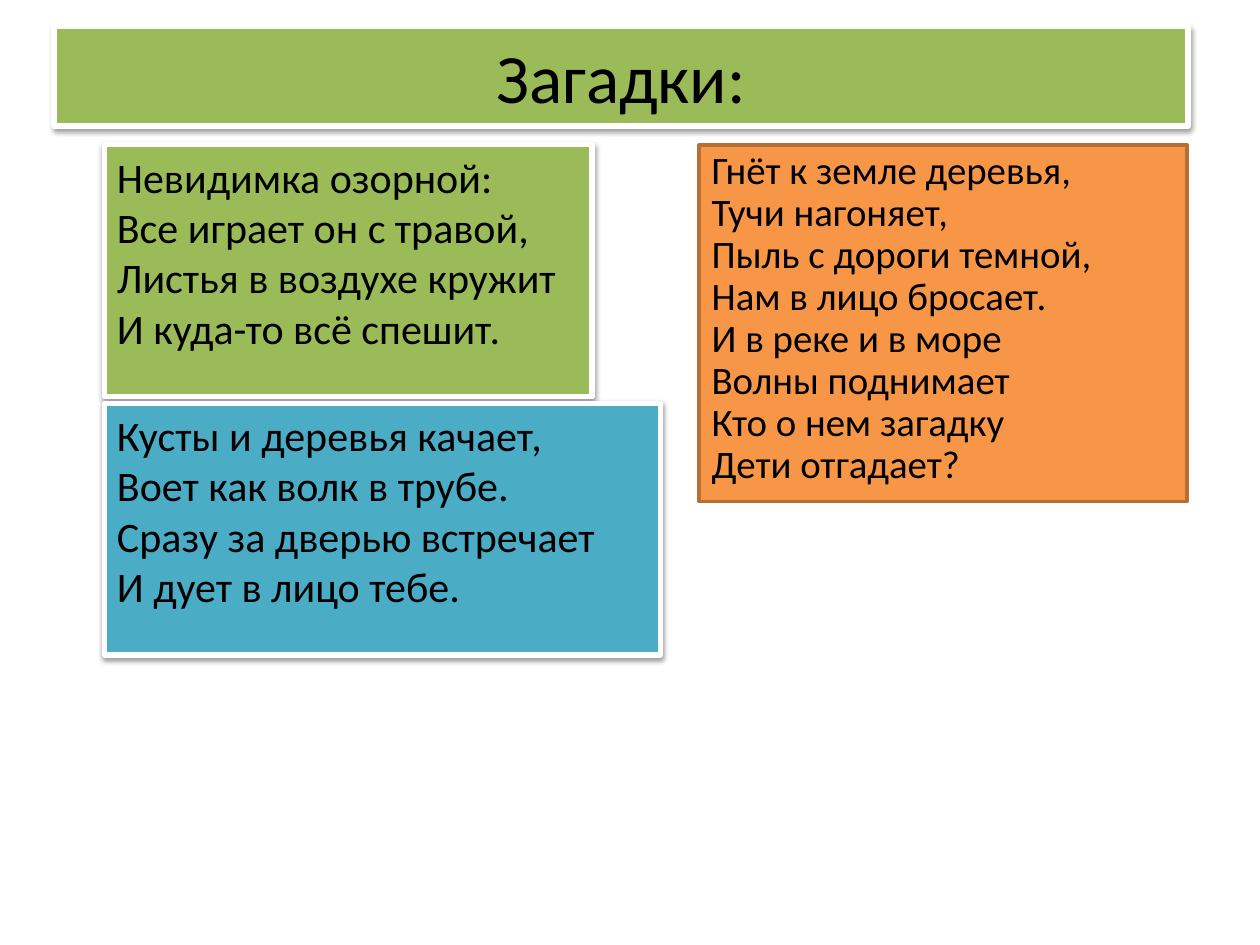
from dataclasses import dataclass

import pptx
import pptx.dml.color
import pptx.enum.shapes
import pptx.enum.text
import pptx.oxml
import pptx.oxml.ns
import pptx.util


@dataclass(frozen=True)
class Theme:
    font: str = "Calibri"
    text: str = "000000"
    green: str = "9BBB59"
    orange: str = "F79646"
    brown: str = "B76F34"
    blue: str = "4BACC6"
    white: str = "FFFFFF"
    title_size: float = 39.6
    verse_size: float = 24
    small_verse_size: float = 22.2


THEME = Theme()
WIDTH, HEIGHT = 10, 7.5
VERSE_INDENT = 0.38


def color(value):
    return pptx.dml.color.RGBColor.from_string(value)


def write_text(frame, text, *, size, align="LEFT", anchor="TOP", indent=0, spacing=None):
    """Fill a text frame with one paragraph per line of text."""
    frame.word_wrap = True
    frame.vertical_anchor = getattr(pptx.enum.text.MSO_ANCHOR, anchor)
    for index, line in enumerate(text.splitlines()):
        paragraph = frame.add_paragraph() if index else frame.paragraphs[0]
        paragraph.alignment = getattr(pptx.enum.text.PP_ALIGN, align)
        if spacing:
            paragraph.line_spacing = spacing
        if indent:
            properties = paragraph._p.get_or_add_pPr()
            properties.set("marL", str(pptx.util.Inches(indent)))
            properties.set("indent", str(-pptx.util.Inches(indent)))
        run = paragraph.add_run()
        run.text = line
        run.font.name = THEME.font
        run.font.size = pptx.util.Pt(size)
        run.font.color.rgb = color(THEME.text)


class RiddleSlide:
    def __init__(self, presentation, theme):
        self.presentation = presentation
        self.theme = theme
        self.slide = presentation.slides.add_slide(presentation.slide_layouts[6])

    def box(self, left, top, width, height, fill, line, line_width):
        """Add a rectangle placed by shares of the slide's size."""
        across, down = self.presentation.slide_width, self.presentation.slide_height
        shape = self.slide.shapes.add_shape(
            pptx.enum.shapes.MSO_SHAPE.RECTANGLE,
            round(left * across), round(top * down),
            round(width * across), round(height * down))
        shape.shadow.inherit = False
        shape.fill.solid()
        shape.fill.fore_color.rgb = color(fill)
        shape.line.color.rgb = color(line)
        shape.line.width = pptx.util.Pt(line_width)
        return shape

    def raised_box(self, *place, fill):
        """Add a white-edged rectangle with a soft shadow below it."""
        shape = self.box(*place, fill, self.theme.white, 3)
        effects = shape._element.spPr.find(pptx.oxml.ns.qn("a:effectLst"))
        effects.append(pptx.oxml.parse_xml(
            f'<a:outerShdw {pptx.oxml.ns.nsdecls("a")} blurRad="{pptx.util.Pt(3.1)}" '
            f'dist="{pptx.util.Pt(1.6)}" dir="5400000" rotWithShape="0">'
            '<a:srgbClr val="000000"><a:alpha val="38000"/></a:srgbClr></a:outerShdw>'))
        return shape

    def title(self, text, *place):
        shape = self.raised_box(*place, fill=self.theme.green)
        write_text(shape.text_frame, text, size=self.theme.title_size,
                   align="CENTER", anchor="MIDDLE")

    def raised_verse(self, text, *place, fill):
        shape = self.raised_box(*place, fill=fill)
        write_text(shape.text_frame, text, size=self.theme.verse_size, indent=VERSE_INDENT)

    def outlined_verse(self, text, *place):
        shape = self.box(*place, self.theme.orange, self.theme.brown, 2)
        write_text(shape.text_frame, text, size=self.theme.small_verse_size,
                   indent=VERSE_INDENT, spacing=0.9)


def main():
    presentation = pptx.Presentation()
    presentation.slide_width = pptx.util.Inches(WIDTH)
    presentation.slide_height = pptx.util.Inches(HEIGHT)
    riddles = RiddleSlide(presentation, THEME)

    # Shared edges of the verse boxes
    left, top = 0.83 / WIDTH, 1.15 / HEIGHT
    column, row = 3.87 / WIDTH, 2 / HEIGHT

    # Heading
    riddles.title("Загадки:", 0.43 / WIDTH, 0.21 / HEIGHT, 0.9, 0.79 / HEIGHT)

    # Upper left riddle
    riddles.raised_verse(
        "Невидимка озорной:\n"
        "Все играет он с травой,\n"
        "Листья в воздухе кружит\n"
        "И куда-то всё спешит.",
        left, top, column, row, fill=THEME.green)

    # Right riddle
    riddles.outlined_verse(
        "Гнёт к земле деревья,\n"
        "Тучи нагоняет,\n"
        "Пыль с дороги темной,\n"
        "Нам в лицо бросает.\n"
        "И в реке и в море\n"
        "Волны поднимает\n"
        "Кто о нем загадку\n"
        "Дети отгадает?",
        5.55 / WIDTH, top, column, 2.83 / HEIGHT)

    # Lower left riddle
    riddles.raised_verse(
        "Кусты и деревья качает,\n"
        "Воет как волк в трубе.\n"
        "Сразу за дверью встречает\n"
        "И дует в лицо тебе.",
        left, 3.2 / HEIGHT, 4.41 / WIDTH, row, fill=THEME.blue)

    presentation.save("out.pptx")


if __name__ == "__main__":
    main()
